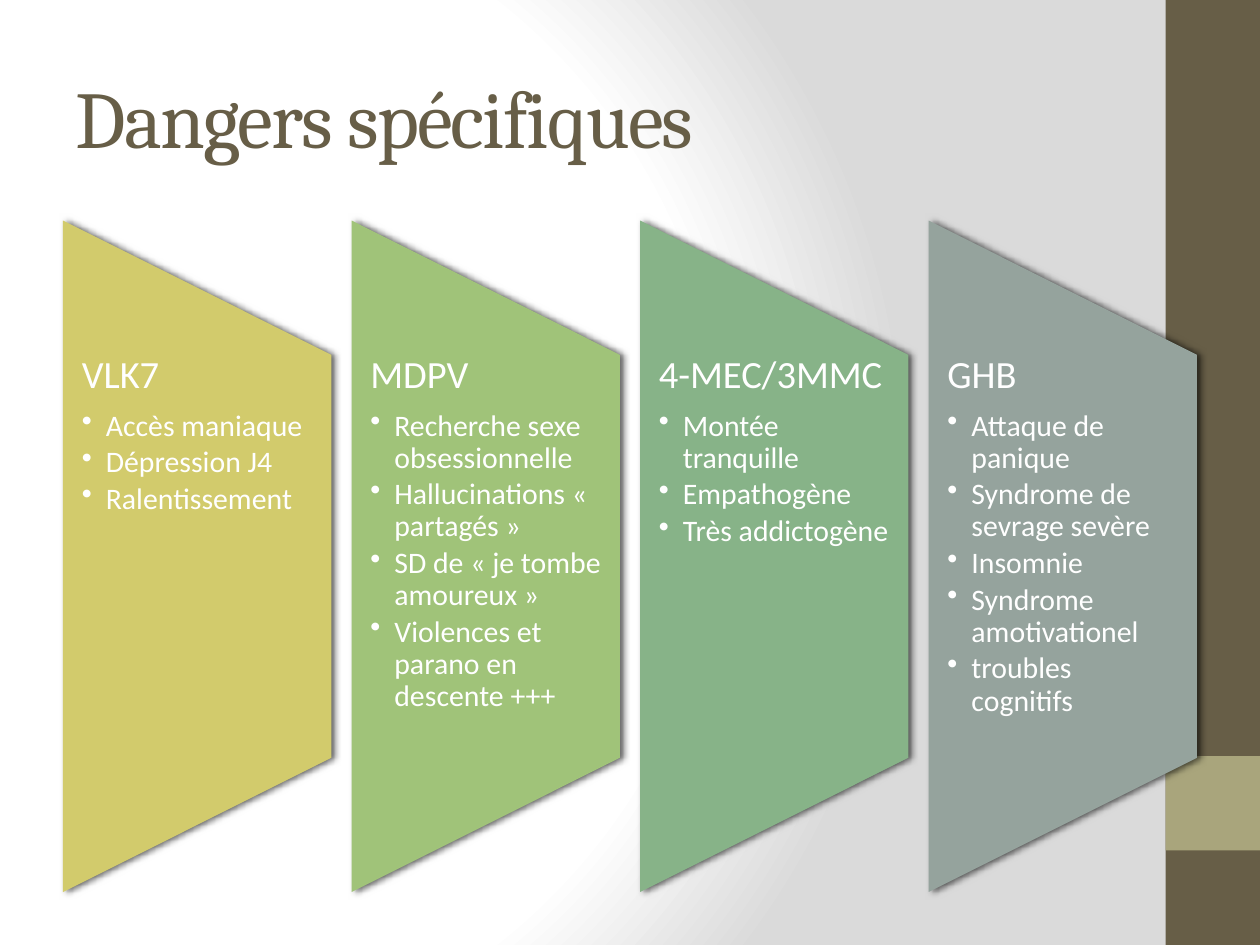
from lxml.etree import SubElement
from pptx import Presentation
from pptx.dml.color import RGBColor
from pptx.enum.shapes import MSO_SHAPE
from pptx.enum.text import MSO_ANCHOR, PP_ALIGN
from pptx.oxml import parse_xml
from pptx.oxml.ns import nsdecls, qn
from pptx.util import Inches, Pt

TITLE = "Dangers spécifiques"
PANELS = [
    ("VLK7", "D2CB6C", ["Accès maniaque", "Dépression J4", "Ralentissement"]),
    ("MDPV", "A0C379", ["Recherche sexe obsessionnelle", "Hallucinations « partagés »",
                        "SD de « je tombe amoureux »",
                        "Violences et parano en descente +++"]),
    ("4-MEC/3MMC", "87B388", ["Montée tranquille", "Empathogène", "Très addictogène"]),
    ("GHB", "95A39D", ["Attaque de panique", "Syndrome de sevrage sevère", "Insomnie",
                       "Syndrome amotivationel", "troubles cognitifs"]),
]
BROWN, KHAKI, WHITE = "675E47", "A9A57C", "FFFFFF"
STOPS = [(0, "FFFFFF"), (75, "FFFFFF"), (100, "DADADA")]
LEFT, STEP, WIDTH = 0.5, 2.29, 2.13
PANEL_TOP, PANEL_HEIGHT = 1.75, 5.33
TEXT_TOP, TEXT_HEIGHT = 2.82, 3.2


def rgb(color):
    return RGBColor.from_string(color)


def set_background(s):
    stops = "".join(f'<a:gs pos="{pos * 1000}"><a:srgbClr val="{color}"/></a:gs>'
                    for pos, color in STOPS)
    s.element.cSld.insert(0, parse_xml(
        f'<p:bg {nsdecls("p", "a")}><p:bgPr><a:gradFill rotWithShape="1">'
        f'<a:gsLst>{stops}</a:gsLst><a:path path="circle">'
        '<a:fillToRect l="20000" t="50000" r="100000" b="50000"/></a:path>'
        '</a:gradFill><a:effectLst/></p:bgPr></p:bg>'))


def add_filled(s, kind, left, top, width, height, color):
    sp = s.shapes.add_shape(kind, Inches(left), Inches(top), Inches(width), Inches(height))
    sp.fill.solid()
    sp.fill.fore_color.rgb = rgb(color)
    sp.line.fill.background()
    sp.shadow.inherit = False
    return sp


def add_shadow(sp):
    effects = sp._element.spPr.find(qn("a:effectLst"))
    shadow = SubElement(effects, qn("a:outerShdw"), blurRad=str(Pt(4)), dist=str(Pt(2)),
                        dir="0", rotWithShape="0")
    color = SubElement(shadow, qn("a:srgbClr"), val="000000")
    SubElement(color, qn("a:alpha"), val="60000")


def write(p, text, size, font="Calibri", color=WHITE, line=None, after=None,
          bullet=False, spacing=None):
    p.alignment = PP_ALIGN.LEFT
    p.line_spacing = line
    if after is not None:
        p.space_after = Pt(after)
    if bullet:
        pPr = p._p.get_or_add_pPr()
        pPr.set("marL", str(Inches(0.19)))
        pPr.set("indent", str(Inches(-0.19)))
        SubElement(pPr, qn("a:buChar"), char="•")
    r = p.add_run()
    r.text = text
    r.font.name = font
    r.font.size = Pt(size)
    r.font.color.rgb = rgb(color)
    if spacing is not None:
        r.font._element.set("spc", str(spacing * 100))


def add_panel(s, left, heading, color, items):
    # The shape is laid out wide, then turned a quarter about its centre.
    sp = add_filled(s, MSO_SHAPE.FLOWCHART_MANUAL_OPERATION,
                    left + (WIDTH - PANEL_HEIGHT) / 2,
                    PANEL_TOP + (PANEL_HEIGHT - WIDTH) / 2,
                    PANEL_HEIGHT, WIDTH, color)
    sp.rotation = 270
    add_shadow(sp)

    tf = s.shapes.add_textbox(Inches(left), Inches(TEXT_TOP),
                              Inches(WIDTH), Inches(TEXT_HEIGHT)).text_frame
    tf.word_wrap = True
    tf.margin_left = tf.margin_right = Inches(0.15)
    tf.margin_top = tf.margin_bottom = 0
    write(tf.paragraphs[0], heading, 22, line=0.9, after=7.7)
    for item in items:
        write(tf.add_paragraph(), item, 17, line=0.9, after=2.55, bullet=True)


prs = Presentation()
prs.slide_width, prs.slide_height = Inches(10), Inches(7.5)
s = prs.slides.add_slide(prs.slide_layouts[5])
set_background(s)

add_filled(s, MSO_SHAPE.RECTANGLE, 9.25, 0, 0.75, 7.5, BROWN)
add_filled(s, MSO_SHAPE.RECTANGLE, 9.25, 6, 0.75, 0.75, KHAKI)

title = s.shapes.title
title.left, title.top = Inches(0.5), Inches(0.3)
title.width, title.height = Inches(8.33), Inches(1.25)
title.text_frame.vertical_anchor = MSO_ANCHOR.MIDDLE
write(title.text_frame.paragraphs[0], TITLE, 46, font="Cambria", color=BROWN, spacing=-1)

for i, (heading, color, items) in enumerate(PANELS):
    add_panel(s, LEFT + i * STEP, heading, color, items)

prs.save("out.pptx")
